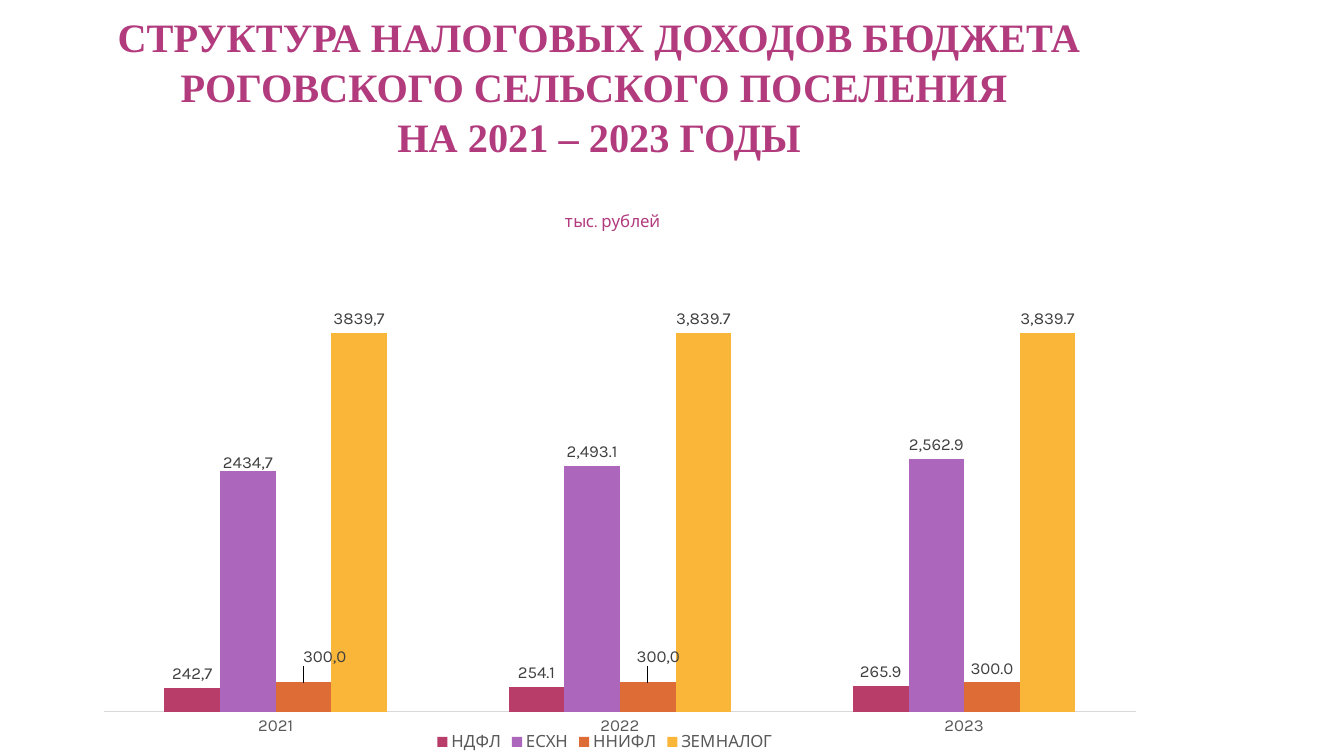
import pptx
import pptx.chart.data
import pptx.dml.color
import pptx.enum.chart
import pptx.enum.text
import pptx.oxml
import pptx.oxml.ns
import pptx.util

Pt = pptx.util.Pt
COLORS = {"title": "B23B7E", "text": "595959", "label": "404040", "axis": "D9D9D9",
          "НДФЛ": "B83D68", "ЕСХН": "AC66BB", "ННИФЛ": "DE6C36", "ЗЕМНАЛОГ": "F9B639"}
YEARS = ["2021", "2022", "2023"]
INCOME = {"НДФЛ": [242.7, 254.1, 265.9], "ЕСХН": [2434.7, 2493.1, 2562.9],
          "ННИФЛ": [300, 300, 300], "ЗЕМНАЛОГ": [3839.7, 3839.7, 3839.7]}
COMMA_LABELS = [("НДФЛ", 0, None), ("ЕСХН", 0, (0, 0.01)), ("ННИФЛ", 0, (0.02, -0.02)),
                ("ННИФЛ", 1, (0.01, -0.02)), ("ЗЕМНАЛОГ", 0, None)]


class Deck:
    """Style and current slide, with a method for each kind of element."""

    def __init__(self, prs):
        self.s = prs.slides.add_slide(prs.slide_layouts[5])
        self.face = "Karla"

    def rgb(self, name):
        return pptx.dml.color.RGBColor.from_string(COLORS[name])

    def font(self, font, size, color, face=None, bold=False):
        font.size, font.bold, font.name = Pt(size), bold, face or self.face
        font.color.rgb = self.rgb(color)

    def layout(self, parent, index, **values):
        for old in parent.findall(pptx.oxml.ns.qn("c:layout")):
            parent.remove(old)
        tags = "".join(f'<c:{k} val="{v}"/>' for k, v in values.items())
        parent.insert(index, pptx.oxml.parse_xml(
            f'<c:layout {pptx.oxml.ns.nsdecls("c")}><c:manualLayout>{tags}'
            '</c:manualLayout></c:layout>'))

    def title(self, lines, x, y, w, h):
        sp = self.s.shapes.title
        sp.left, sp.top, sp.width, sp.height = Pt(x), Pt(y), Pt(w), Pt(h)
        tf = sp.text_frame
        tf.word_wrap, tf.auto_size = True, pptx.enum.text.MSO_AUTO_SIZE.NONE
        tf.vertical_anchor = pptx.enum.text.MSO_ANCHOR.BOTTOM
        tf.margin_left = tf.margin_right = Pt(3.6)
        tf.margin_top = tf.margin_bottom = Pt(0)
        p = tf.paragraphs[0]
        p.alignment, p.line_spacing = pptx.enum.text.PP_ALIGN.CENTER, 1.04
        for i, line in enumerate(lines):
            if i:
                p.add_line_break()
            r = p.add_run()
            r.text = line
            self.font(r.font, 28.8, "title", "Times New Roman", True)

    def chart(self, heading, x, y, w, h):
        data = pptx.chart.data.CategoryChartData(number_format="0.0")
        data.categories = YEARS
        for name, values in INCOME.items():
            data.add_series(name, values)
        chart = self.s.shapes.add_chart(
            pptx.enum.chart.XL_CHART_TYPE.COLUMN_CLUSTERED,
            Pt(x), Pt(y), Pt(w), Pt(h), data).chart
        chart.font.name, chart.font.size = self.face, Pt(10)
        r = chart.chart_title.text_frame.paragraphs[0].add_run()
        r.text = heading
        self.font(r.font, 12, "title")
        self.layout(chart.chart_title._element, 1, xMode="edge", yMode="edge", x=0.46, y=0.05)
        self.layout(chart._chartSpace.chart.plotArea, 0, layoutTarget="inner",
                    xMode="edge", yMode="edge", x=0.029, y=0.155, w=0.971, h=0.769)
        self.axes(chart)
        chart.has_legend = True
        chart.legend.position = pptx.enum.chart.XL_LEGEND_POSITION.BOTTOM
        chart.legend.include_in_layout = False
        self.font(chart.legend.font, 12, "text")
        self.series(chart.plots[0])

    def axes(self, chart):
        none = pptx.enum.chart.XL_TICK_MARK.NONE
        cat, val = chart.category_axis, chart.value_axis
        cat.major_tick_mark = cat.minor_tick_mark = none
        self.font(cat.tick_labels.font, 12, "text")
        cat.format.line.color.rgb, cat.format.line.width = self.rgb("axis"), Pt(0.75)
        val.minimum_scale, val.maximum_scale = 0, 4500
        val.has_major_gridlines, val.visible = False, False

    def series(self, plot):
        outside = pptx.enum.chart.XL_LABEL_POSITION.OUTSIDE_END
        plot.gap_width, plot.overlap, plot.vary_by_categories = 219, 0, False
        bars = {ser.name: ser for ser in plot.series}
        for name, ser in bars.items():
            ser.format.fill.solid()
            ser.format.fill.fore_color.rgb = self.rgb(name)
            labels = ser.data_labels
            labels.show_value, labels.position = True, outside
            labels.number_format, labels.number_format_is_linked = "#,##0.0", False
            self.font(labels.font, 12, "label")
        for name, i, shift in COMMA_LABELS:
            label = bars[name].points[i].data_label
            r = label.text_frame.paragraphs[0].add_run()
            r.text = f"{INCOME[name][i]:.1f}".replace(".", ",")
            self.font(r.font, 12, "label")
            label.position = outside
            if shift:
                dLbl = bars[name].data_labels._element.get_or_add_dLbl_for_point(i)
                self.layout(dLbl, 1, x=shift[0], y=shift[1])


def main():
    prs = pptx.Presentation()
    prs.slide_width, prs.slide_height = Pt(960), Pt(540)
    deck = Deck(prs)
    deck.title(["СТРУКТУРА НАЛОГОВЫХ ДОХОДОВ БЮДЖЕТА РОГОВСКОГО СЕЛЬСКОГО ПОСЕЛЕНИЯ ",
                "НА 2021 – 2023 ГОДЫ"], 48, 25, 760, 90)
    deck.chart("тыс. рублей", 52, 127, 760, 413)
    prs.save("out.pptx")


if __name__ == "__main__":
    main()
